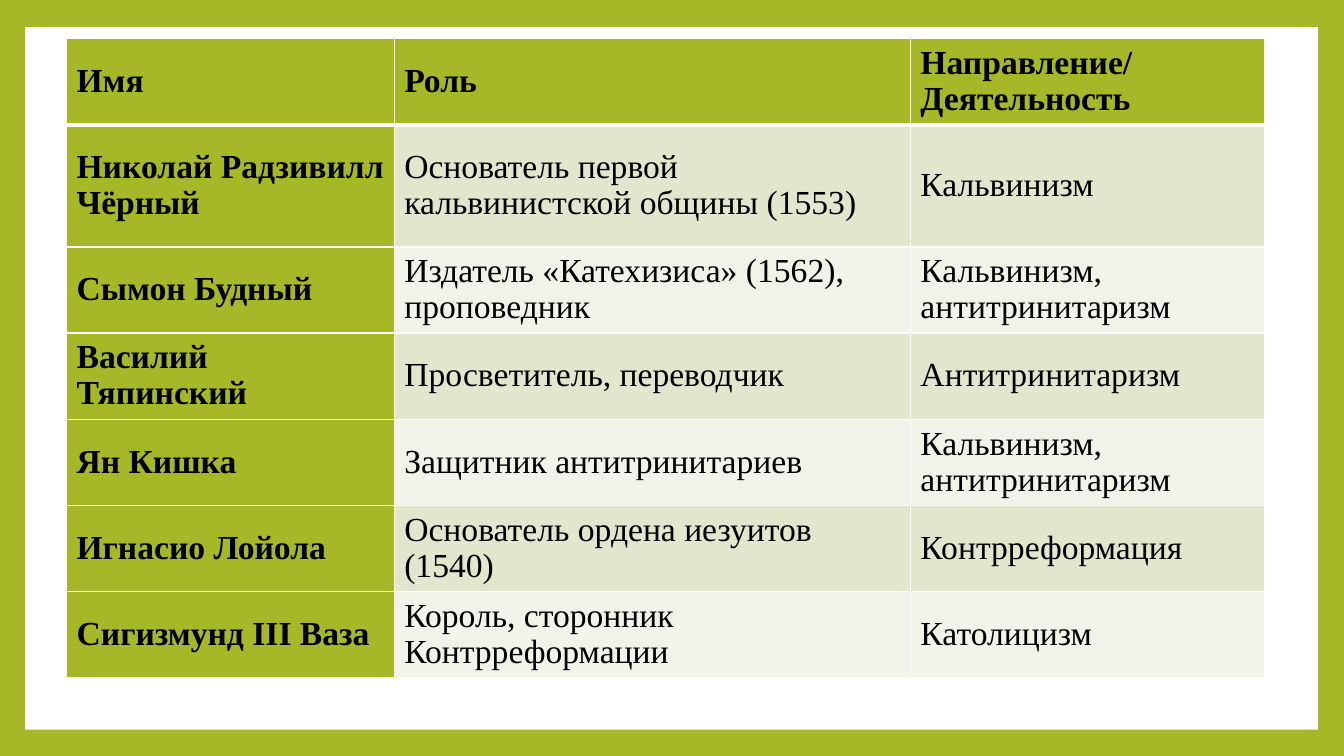
from dataclasses import dataclass

from pptx import Presentation
from pptx.dml.color import RGBColor
from pptx.enum.shapes import MSO_SHAPE as Shape
from pptx.enum.text import MSO_ANCHOR as Anchor
from pptx.oxml import parse_xml
from pptx.oxml.ns import nsdecls
from pptx.util import Inches, Pt


@dataclass(frozen=True)
class Theme:
    green: str = "A6B727"
    white: str = "FFFFFF"
    black: str = "000000"
    bands: tuple[str, str] = ("E1E6CD", "F1F3E8")
    font: str = "Times New Roman"
    size: float = 24
    line_spacing: float = 0.97
    thin: float = 1
    thick: float = 3


@dataclass(frozen=True)
class Person:
    name: str
    role: str
    movement: str
    height: float = 0.855


THEME = Theme()
COL_WIDTHS = (3.25, 5.12, 3.51)
HEADER = Person("Имя", "Роль", "Направление/\nДеятельность", 0.86)
PEOPLE = (
    Person("Николай Радзивилл Чёрный",
           "Основатель первой кальвинистской общины (1553)", "Кальвинизм", 1.21),
    Person("Сымон Будный", "Издатель «Катехизиса» (1562), проповедник",
           "Кальвинизм, антитринитаризм"),
    Person("Василий Тяпинский", "Просветитель, переводчик", "Антитринитаризм"),
    Person("Ян Кишка", "Защитник антитринитариев", "Кальвинизм, антитринитаризм"),
    Person("Игнасио Лойола", "Основатель ордена иезуитов (1540)", "Контрреформация"),
    Person("Сигизмунд III Ваза", "Король, сторонник Контрреформации", "Католицизм"),
)


def set_fill(target, color: str) -> None:
    target.fill.solid()
    target.fill.fore_color.rgb = RGBColor.from_string(color)


def write(tf, text: str, *, bold: bool = False, color: str = THEME.black) -> None:
    """Write each line of text as its own paragraph."""
    for i, line in enumerate(text.split("\n")):
        p = tf.paragraphs[0] if i == 0 else tf.add_paragraph()
        p.line_spacing = THEME.line_spacing
        r = p.add_run()
        r.text = line
        r.font.name = THEME.font
        r.font.size = Pt(THEME.size)
        r.font.bold = bold
        r.font.color.rgb = RGBColor.from_string(color)


def set_borders(cell, top: float, bottom: float) -> None:
    """Draw white borders; they must precede the fill in the cell XML."""
    tc_pr = cell._tc.get_or_add_tcPr()
    widths = {"lnL": THEME.thin, "lnR": THEME.thin, "lnT": top, "lnB": bottom}
    for side, width in widths.items():
        tc_pr.append(parse_xml(
            f'<a:{side} {nsdecls("a")} w="{Pt(width)}"><a:solidFill>'
            f'<a:srgbClr val="{THEME.white}"/></a:solidFill></a:{side}>'))


def add_people_table(s, left: float, top: float) -> None:
    rows = (HEADER, *PEOPLE)
    frame = s.shapes.add_table(
        len(rows), len(COL_WIDTHS), Inches(left), Inches(top),
        Inches(sum(COL_WIDTHS)), Inches(sum(row.height for row in rows)))
    table = frame.table
    table.first_col = True
    for column, width in zip(table.columns, COL_WIDTHS):
        column.width = Inches(width)
    for i, person in enumerate(rows):
        table.rows[i].height = Inches(person.height)
        for j, text in enumerate((person.name, person.role, person.movement)):
            cell = table.cell(i, j)
            heading = i == 0 or j == 0
            cell.vertical_anchor = Anchor.MIDDLE
            set_borders(cell, top=THEME.thick if i == 1 else THEME.thin,
                        bottom=THEME.thick if i == 0 else THEME.thin)
            set_fill(cell, THEME.green if heading else THEME.bands[(i - 1) % 2])
            write(cell.text_frame, text, bold=heading)


def main() -> None:
    prs = Presentation()
    prs.slide_width, prs.slide_height = Inches(13.33), Inches(7.5)
    s = prs.slides.add_slide(prs.slide_layouts[6])

    # Green frame around a white panel
    set_fill(s.background, THEME.green)
    panel = s.shapes.add_shape(Shape.RECTANGLE, Inches(0.25), Inches(0.27),
                               Inches(12.82), Inches(6.97))
    panel.shadow.inherit = False
    set_fill(panel, THEME.white)
    panel.line.fill.background()

    # Table of reformers and their opponents
    add_people_table(s, left=0.66, top=0.38)
    prs.save("out.pptx")


if __name__ == "__main__":
    main()
